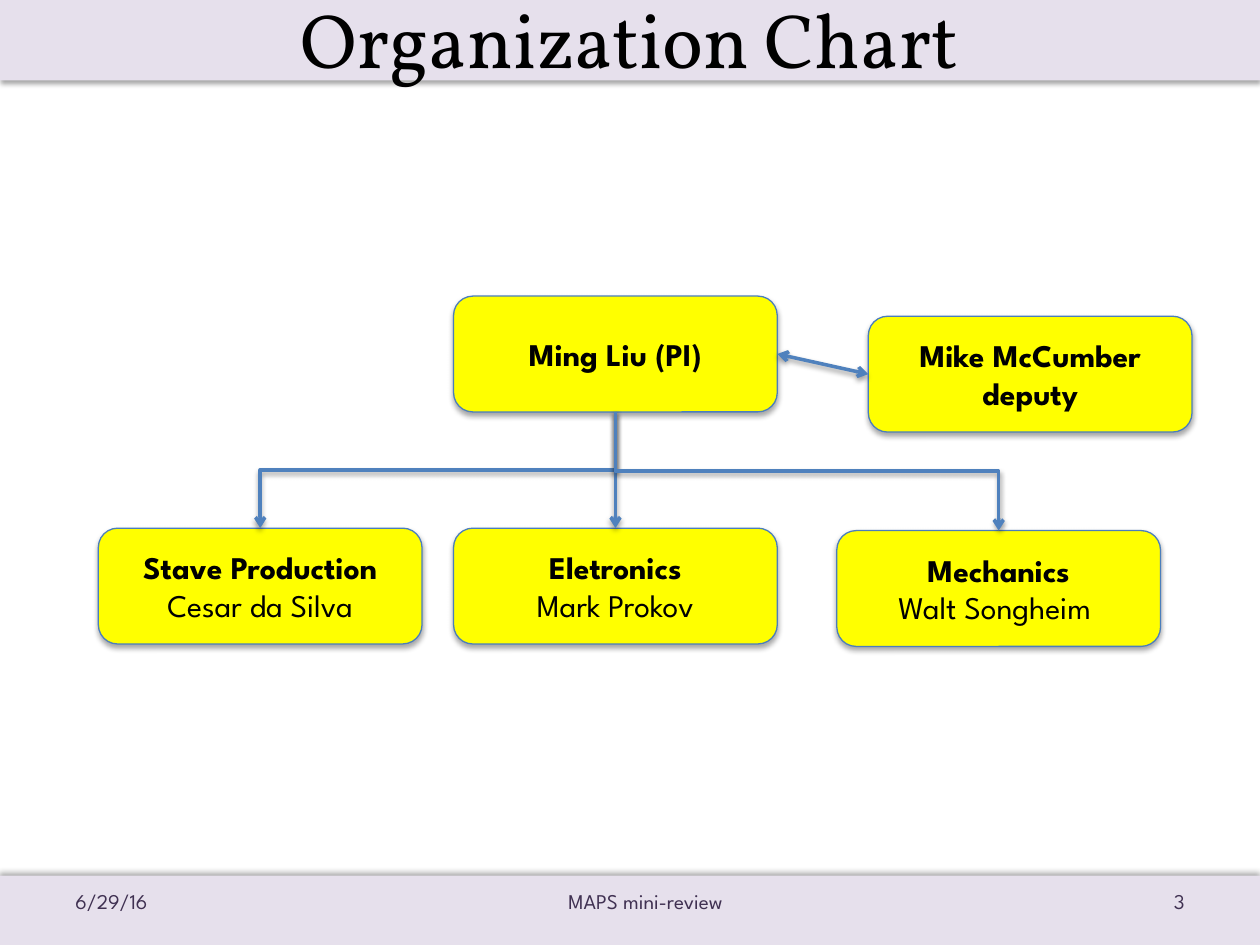
from dataclasses import dataclass

from lxml import etree
from pptx import Presentation
from pptx.dml.color import RGBColor
from pptx.enum.shapes import MSO_CONNECTOR, MSO_SHAPE
from pptx.enum.text import MSO_ANCHOR, PP_ALIGN
from pptx.oxml.ns import qn
from pptx.util import Pt

RECTANGLE, ROUNDED = MSO_SHAPE.RECTANGLE, MSO_SHAPE.ROUNDED_RECTANGLE
ELBOW, STRAIGHT = MSO_CONNECTOR.ELBOW, MSO_CONNECTOR.STRAIGHT
LEFT, CENTER, RIGHT = PP_ALIGN.LEFT, PP_ALIGN.CENTER, PP_ALIGN.RIGHT
TOP, MIDDLE = MSO_ANCHOR.TOP, MSO_ANCHOR.MIDDLE
TOP_SITE, LEFT_SITE, BOTTOM_SITE, RIGHT_SITE = range(4)


@dataclass(frozen=True)
class Theme:
    band: str = "E6E0EC"
    card: str = "FFFF00"
    card_line: str = "4B7EBC"
    connector: str = "4F81BD"
    text: str = "000000"
    footer_text: str = "403152"
    title_font: str = "Vollkorn"
    body_font: str = "League Spartan"
    title_size: float = 44
    card_size: float = 18
    footer_size: float = 12


THEME = Theme()
SLIDE_WIDTH, SLIDE_HEIGHT = 720, 540
CARD_WIDTH, CARD_HEIGHT = 185, 66.2


def color(value):
    return RGBColor.from_string(value)


def add_shadow(shape, opacity=35, distance=1.8, direction=90):
    properties = shape._element.spPr
    for effects in properties.findall(qn("a:effectLst")):
        properties.remove(effects)
    effects = etree.SubElement(properties, qn("a:effectLst"))
    shadow = etree.SubElement(
        effects, qn("a:outerShdw"), blurRad=str(Pt(3.1)), dist=str(Pt(distance)),
        dir=str(direction * 60000), rotWithShape="0")
    black = etree.SubElement(shadow, qn("a:srgbClr"), val="000000")
    etree.SubElement(black, qn("a:alpha"), val=str(opacity * 1000))


def write_text(shape, lines, *, size, font=THEME.body_font, fill=THEME.text,
               align=CENTER, anchor=MIDDLE, bold_lines=0, top_inset=3.6):
    frame = shape.text_frame
    frame.word_wrap = True
    frame.vertical_anchor = anchor
    frame.margin_top = Pt(top_inset)
    for index, line in enumerate(lines):
        paragraph = frame.paragraphs[0] if index == 0 else frame.add_paragraph()
        paragraph.alignment = align
        run = paragraph.add_run()
        run.text = line
        run.font.size = Pt(size)
        run.font.name = font
        run.font.bold = index < bold_lines
        run.font.color.rgb = color(fill)


def add_text_box(slide, box, text, **text_format):
    shape = slide.shapes.add_textbox(*map(Pt, box))
    write_text(shape, [text], **text_format)


def add_panel(slide, kind, box, fill, line=None, direction=90):
    shape = slide.shapes.add_shape(kind, *map(Pt, box))
    shape.fill.solid()
    shape.fill.fore_color.rgb = color(fill)
    if line:
        shape.line.color.rgb = color(line)
        shape.line.width = Pt(0.75)
    else:
        shape.line.fill.background()
    add_shadow(shape, direction=direction)
    return shape


def add_header(slide, box, title):
    left, top, width, height = box
    add_panel(slide, RECTANGLE, box, THEME.band)
    add_text_box(slide, (left + 36, top - 10.8, width - 72, height), title,
                 size=THEME.title_size, font=THEME.title_font, anchor=TOP, top_inset=6)


def add_footer(slide, box, date, label, number):
    left, top, width, height = box
    add_panel(slide, RECTANGLE, box, THEME.band, direction=256)
    fields = [(36, 168, date, LEFT), (149, 440, label, CENTER),
              (width - 204, 168, number, RIGHT)]
    for offset, field_width, text, align in fields:
        add_text_box(slide, (left + offset, top, field_width, 28.8), text,
                     size=THEME.footer_size, fill=THEME.footer_text, align=align)


def add_card(slide, left, top, lines, bold_lines=1):
    card = add_panel(slide, ROUNDED, (left, top, CARD_WIDTH, CARD_HEIGHT),
                     THEME.card, line=THEME.card_line)
    write_text(card, lines, size=THEME.card_size, bold_lines=bold_lines)
    return card


def add_link(slide, kind, start, start_site, end, end_site, both_ends=False):
    connector = slide.shapes.add_connector(kind, 0, 0, 0, 0)
    connector.begin_connect(start, start_site)
    connector.end_connect(end, end_site)
    connector.line.color.rgb = color(THEME.connector)
    connector.line.width = Pt(2)
    line = connector.line._get_or_add_ln()
    for end_name in ["a:headEnd", "a:tailEnd"][0 if both_ends else 1:]:
        etree.SubElement(line, qn(end_name), type="arrow")
    add_shadow(connector, opacity=38, distance=1.6)
    return connector


def add_branch(slide, parent, child):
    connector = add_link(slide, ELBOW, parent, BOTTOM_SITE, child, TOP_SITE)
    start_x, end_x = (card.left + card.width // 2 for card in (parent, child))
    start_y, end_y = parent.top + parent.height, child.top
    across, down = abs(end_x - start_x), end_y - start_y
    connector.left = (start_x + end_x - down) // 2
    connector.top = (start_y + end_y - across) // 2
    connector.width, connector.height = down, across
    transform = connector._element.spPr.xfrm
    transform.flipV = False
    transform.flipH = end_x > start_x
    transform.rot = 270 if end_x > start_x else 90


def add_organization(slide, box):
    left, top, width, height = box
    lower = top + height - CARD_HEIGHT
    lead_left = left + 203
    lead = add_card(slide, lead_left, top, ["Ming Liu (PI)"])
    deputy = add_card(slide, left + width - CARD_WIDTH, top + 11.5,
                      ["Mike McCumber", "deputy"], bold_lines=2)
    teams = [
        add_card(slide, left, lower - 1.4, ["Stave Production", "Cesar da Silva"]),
        add_card(slide, lead_left, lower - 1.4, ["Eletronics", "Mark Prokov"]),
        add_card(slide, left + 422, lower, ["Mechanics", "Walt Songheim "]),
    ]
    for team in teams:
        add_branch(slide, lead, team)
    add_link(slide, STRAIGHT, lead, RIGHT_SITE, deputy, LEFT_SITE, both_ends=True)


def main():
    presentation = Presentation()
    presentation.slide_width = Pt(SLIDE_WIDTH)
    presentation.slide_height = Pt(SLIDE_HEIGHT)
    slide = presentation.slides.add_slide(presentation.slide_layouts[6])
    add_header(slide, (0, 0, SLIDE_WIDTH, 46), "Organization Chart")
    add_footer(slide, (0, 500.4, SLIDE_WIDTH, 39.6), "6/29/16", "MAPS mini-review", "3")
    add_organization(slide, (56.2, 169.2, 625, 200.2))
    presentation.save("out.pptx")


if __name__ == "__main__":
    main()
